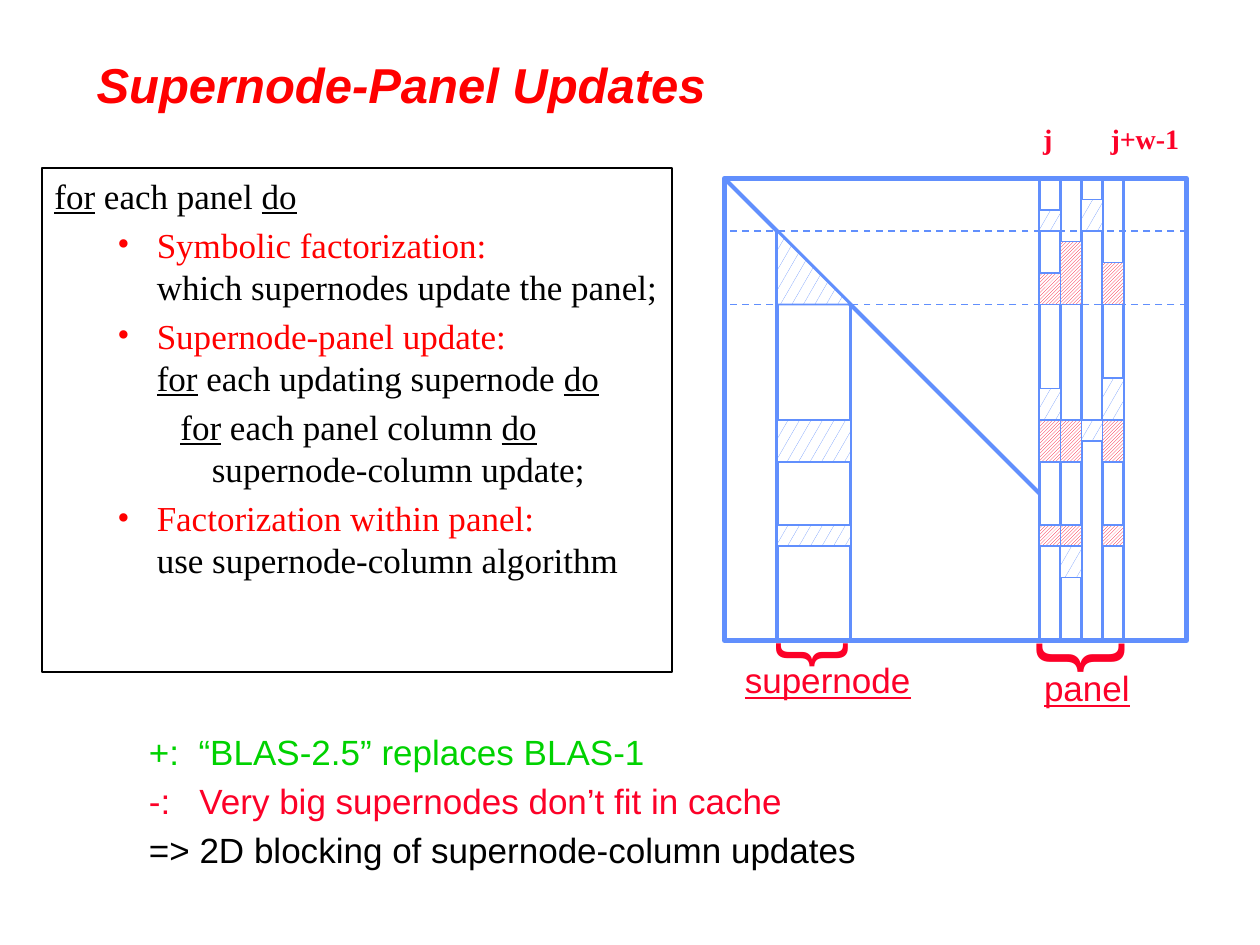
from lxml.etree import SubElement
from pptx import Presentation
from pptx.dml.color import RGBColor
from pptx.enum.dml import MSO_LINE, MSO_PATTERN
from pptx.enum.shapes import MSO_CONNECTOR, MSO_SHAPE
from pptx.enum.text import MSO_ANCHOR, MSO_AUTO_SIZE, PP_ALIGN
from pptx.oxml.ns import qn
from pptx.util import Pt

RED, CRIMSON, BLUE, GREEN, BLACK, WHITE = "FF0000", "FC0128", "618FFD", "00D200", "000000", "FFFFFF"
SERIF, SANS = "Times New Roman", "Arial"
UNIT = 6


def color(value):
    return RGBColor.from_string(value)


def format_run(run, font_name, size, hex_color, underline=False, bold=False):
    run.font.name = font_name
    run.font.size = Pt(size)
    run.font.color.rgb = color(hex_color)
    run.font.underline = underline
    run.font.bold = bold


presentation = Presentation()
presentation.slide_width, presentation.slide_height = Pt(720), Pt(540)
slide = presentation.slides.add_slide(presentation.slide_layouts[5])
shapes = slide.shapes

title = shapes.title
title.left, title.top, title.width, title.height = Pt(48), Pt(24), Pt(590), Pt(48)
title.text_frame.text = "Supernode-Panel Updates"
title.text_frame.vertical_anchor = MSO_ANCHOR.MIDDLE
title.text_frame.auto_size = MSO_AUTO_SIZE.NONE
title_paragraph = title.text_frame.paragraphs[0]
title_paragraph.alignment = PP_ALIGN.LEFT
format_run(title_paragraph.runs[0], SANS, 28, RED, bold=True)
title_paragraph.runs[0].font.italic = True

algorithm_box = shapes.add_shape(MSO_SHAPE.RECTANGLE, Pt(24), Pt(96), Pt(360), Pt(288))
algorithm_box.shadow.inherit = False
algorithm_box.fill.background()
algorithm_box.line.color.rgb = color(BLACK)
algorithm_box.line.width = Pt(1)
conclusions = shapes.add_textbox(Pt(78), Pt(414), Pt(516), Pt(90))

algorithm = [
    (27, -27, False, [("_for_ each panel _do_", BLACK)]),
    (58.5, -22.5, True, [("Symbolic factorization:", RED), ("which supernodes update the panel;", BLACK)]),
    (58.5, -22.5, True, [("Supernode-panel update:", RED), ("_for_ each updating supernode _do_", BLACK)]),
    (90, -18, False, [("_for_ each panel column _do_", BLACK), ("supernode-column update;", BLACK)]),
    (58.5, -22.5, True, [("Factorization within panel:", RED), ("use supernode-column algorithm", BLACK)]),
]
remarks = [
    (27, -27, False, [("+:  “BLAS-2.5” replaces BLAS-1", GREEN)]),
    (27, -27, False, [("-:   Very big supernodes don’t fit in cache", CRIMSON)]),
    (27, -27, False, [("=> 2D blocking of supernode-column updates", BLACK)]),
]
for shape, font_name, content in [(algorithm_box, SERIF, algorithm), (conclusions, SANS, remarks)]:
    text_frame = shape.text_frame
    text_frame.word_wrap = True
    text_frame.vertical_anchor = MSO_ANCHOR.TOP
    for index, (margin, indent, bulleted, lines) in enumerate(content):
        paragraph = text_frame.add_paragraph() if index else text_frame.paragraphs[0]
        paragraph.alignment = PP_ALIGN.LEFT
        paragraph.space_before = Pt(4)
        properties = paragraph._p.get_or_add_pPr()
        properties.set("marL", str(Pt(margin)))
        properties.set("indent", str(Pt(indent)))
        if bulleted:
            bullet_color = SubElement(properties, qn("a:buClr"))
            SubElement(bullet_color, qn("a:srgbClr"), val=RED)
            SubElement(properties, qn("a:buFont"), typeface=SERIF)
            SubElement(properties, qn("a:buChar"), char="•")
        for line_index, (line, hex_color) in enumerate(lines):
            if line_index:
                paragraph.add_line_break()
            for part_index, part in enumerate(line.split("_")):
                if part:
                    run = paragraph.add_run()
                    run.text = part
                    format_run(run, font_name, 20, hex_color, underline=part_index % 2 == 1)

matrix = shapes.add_shape(MSO_SHAPE.RECTANGLE, *[Pt(n * UNIT) for n in (69, 17, 44, 44)])
matrix.shadow.inherit = False
matrix.fill.background()
matrix.line.color.rgb = color(BLUE)
matrix.line.width = Pt(3)

panel_columns = [99, 101, 103, 105, 107]
solid_lines = [(x, 17, x, 61) for x in panel_columns]
solid_lines += [(69, 17, 99, 47), (74, 22, 74, 61), (81, 29, 81, 61)]
dashed_lines = [(113, y, 69, y) for y in (22, 29)]
for ends in solid_lines + dashed_lines:
    connector = shapes.add_connector(MSO_CONNECTOR.STRAIGHT, *[Pt(n * UNIT) for n in ends])
    SubElement(connector._element.spPr, qn("a:effectLst"))
    connector.line.color.rgb = color(BLUE)
    connector.line.width = Pt(1 if ends in dashed_lines else 2.25)
    if ends in dashed_lines:
        connector.line.dash_style = MSO_LINE.DASH

source_style = (MSO_PATTERN.SMALL_CONFETTI, BLUE)
update_style = (MSO_PATTERN.DARK_UPWARD_DIAGONAL, CRIMSON)
blocks = [(MSO_SHAPE.RECTANGLE, source_style, (74, y, 7, height)) for y, height in ((40, 4), (50, 2))]
blocks += [(MSO_SHAPE.RECTANGLE, update_style, (x, y, 2, height))
           for y, height in ((40, 4), (50, 2)) for x in (99, 101, 105)]
blocks += [(MSO_SHAPE.RECTANGLE, update_style, (x, 29 - height, 2, height))
           for x, height in ((99, 3), (101, 6), (105, 4))]
blocks += [(MSO_SHAPE.RECTANGLE, source_style, (x, y, 2, height))
           for x, y, height in ((99, 20, 2), (99, 37, 3), (101, 52, 3),
                                (103, 19, 3), (103, 40, 2), (105, 36, 4))]
blocks.append((MSO_SHAPE.RIGHT_TRIANGLE, source_style, (74, 22, 7, 7)))
for preset, (pattern, hex_color), bounds in blocks:
    block = shapes.add_shape(preset, *[Pt(n * UNIT) for n in bounds])
    block.shadow.inherit = False
    block.fill.patterned()
    block.fill.pattern = pattern
    block.fill.fore_color.rgb = color(hex_color)
    block.fill.back_color.rgb = color(WHITE)
    block.line.color.rgb = color(BLUE)
    block.line.width = Pt(1)

labels = [
    ("j", (589, 66, 20, 26.5), SERIF, 16, 0),
    ("j+w-1", (627.5, 66, 54, 26.5), SERIF, 16, 0),
    ("supernode", (418.5, 373, 112, 31), SANS, 20, 0),
    ("panel", (589.5, 377.5, 65, 31), SANS, 20, 0),
    ("}", (455.5, 345, 29.5, 60), SANS, 44, 90),
    ("}", (609, 340.5, 32.5, 72), SANS, 54, 90),
]
for text, bounds, font_name, size, rotation in labels:
    label = shapes.add_textbox(*[Pt(n) for n in bounds])
    label.rotation = rotation
    label.text_frame.word_wrap = False
    label.text_frame.auto_size = MSO_AUTO_SIZE.SHAPE_TO_FIT_TEXT
    label.text_frame.text = text
    format_run(label.text_frame.paragraphs[0].runs[0], font_name, size, CRIMSON,
               underline=size == 20, bold=size == 16)

presentation.save("out.pptx")
